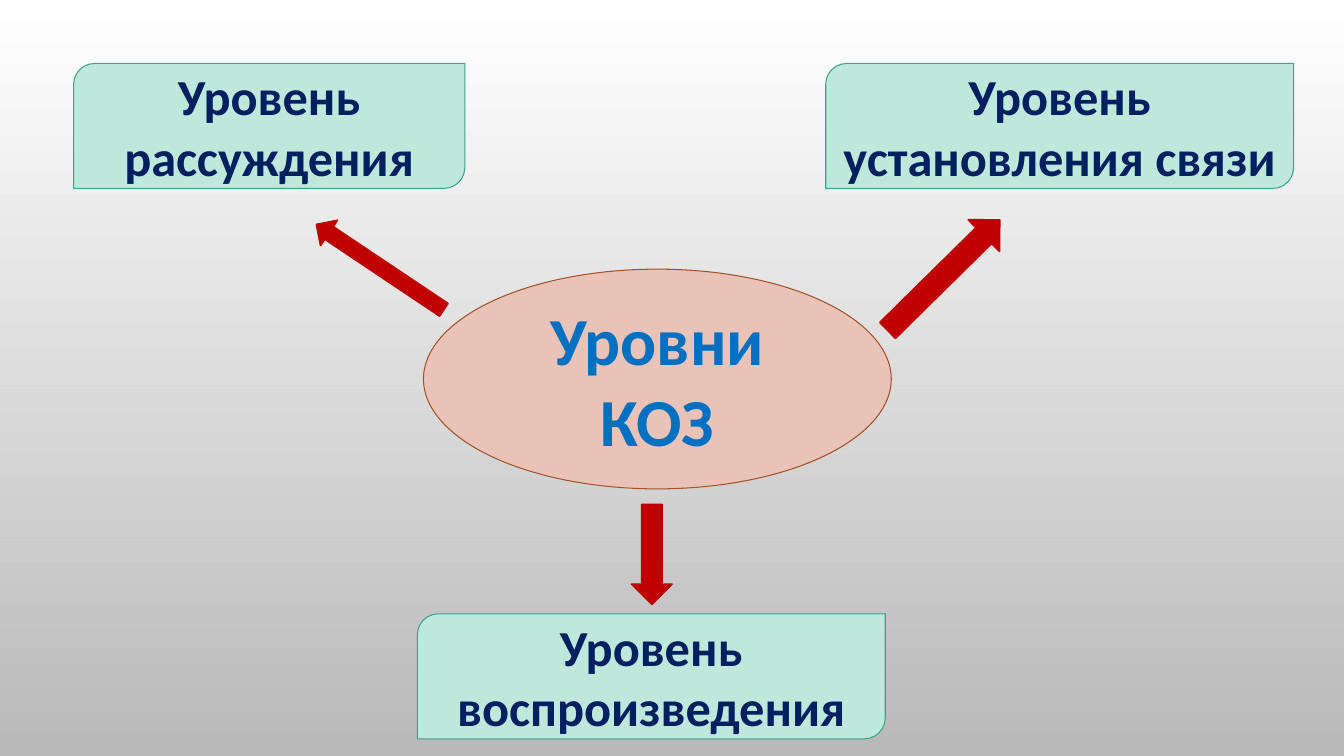
from pptx import Presentation
from pptx.dml.color import RGBColor
from pptx.enum.shapes import MSO_SHAPE as Shape
from pptx.enum.text import MSO_ANCHOR as Anchor, PP_ALIGN as Align
from pptx.util import Inches, Pt

CENTRE_FONT = {"name": "Calibri", "size": Pt(48), "bold": True}
LEVEL_FONT = {"name": "Calibri", "size": Pt(36), "bold": True}

LEVELS = [
    ("Уровень рассуждения", (0.73, 0.63, 3.88, 1.24)),
    ("Уровень установления связи", (8.19, 0.63, 4.64, 1.24)),
    ("Уровень воспроизведения", (4.14, 6.09, 4.64, 1.24)),
]
# Box before rotation, then clockwise angle
ARROWS = [
    ((3.01, 2.5, 1.52, 0.3), 213.8),
    ((8.58, 2.51, 1.56, 0.44), 315.4),
    ((5.97, 5.3, 0.99, 0.4), 90),
]


def colour(hex_value):
    return RGBColor.from_string(hex_value)


def paint_background(slide, top, bottom):
    fill = slide.background.fill
    fill.gradient()
    fill.gradient_angle = 270
    for stop, shade in zip(fill.gradient_stops, (top, bottom)):
        stop.color.rgb = colour(shade)


def add_figure(slide, kind, box, fill, line, line_width):
    figure = slide.shapes.add_shape(kind, *map(Inches, box))
    figure.shadow.inherit = False
    figure.fill.solid()
    figure.fill.fore_color.rgb = colour(fill)
    figure.line.color.rgb = colour(line)
    figure.line.width = Pt(line_width)
    return figure


def write_caption(figure, text, font_format, text_colour):
    frame = figure.text_frame
    frame.word_wrap = True
    frame.vertical_anchor = Anchor.MIDDLE
    caption = frame.paragraphs[0]
    caption.alignment = Align.CENTER
    run = caption.add_run()
    run.text = text
    for attribute, value in font_format.items():
        setattr(run.font, attribute, value)
    run.font.color.rgb = colour(text_colour)


def add_centre(slide, text, box):
    ellipse = add_figure(slide, Shape.OVAL, box, "E9C2B8", "A55229", 0.75)
    write_caption(ellipse, text, CENTRE_FONT, "0070C0")


def add_level(slide, text, box):
    card = add_figure(slide, Shape.ROUND_2_DIAG_RECTANGLE, box,
                      "BDE8DB", "3CA28B", 0.75)
    write_caption(card, text, LEVEL_FONT, "002060")


def add_arrow(slide, box, angle):
    arrow = add_figure(slide, Shape.RIGHT_ARROW, box, "C00000", "C00000", 1.25)
    arrow.rotation = angle


def build_levels_slide(deck):
    slide = deck.slides.add_slide(deck.slide_layouts[6])
    paint_background(slide, "FFFFFF", "B9B9B9")
    # Central topic
    add_centre(slide, "Уровни КОЗ", (4.2, 2.67, 4.64, 2.18))
    # Levels around it
    for text, box in LEVELS:
        add_level(slide, text, box)
    # Arrows from the topic to each level
    for box, angle in ARROWS:
        add_arrow(slide, box, angle)


def main():
    deck = Presentation()
    deck.slide_width, deck.slide_height = Inches(13.33), Inches(7.5)
    build_levels_slide(deck)
    deck.save("out.pptx")


if __name__ == "__main__":
    main()
